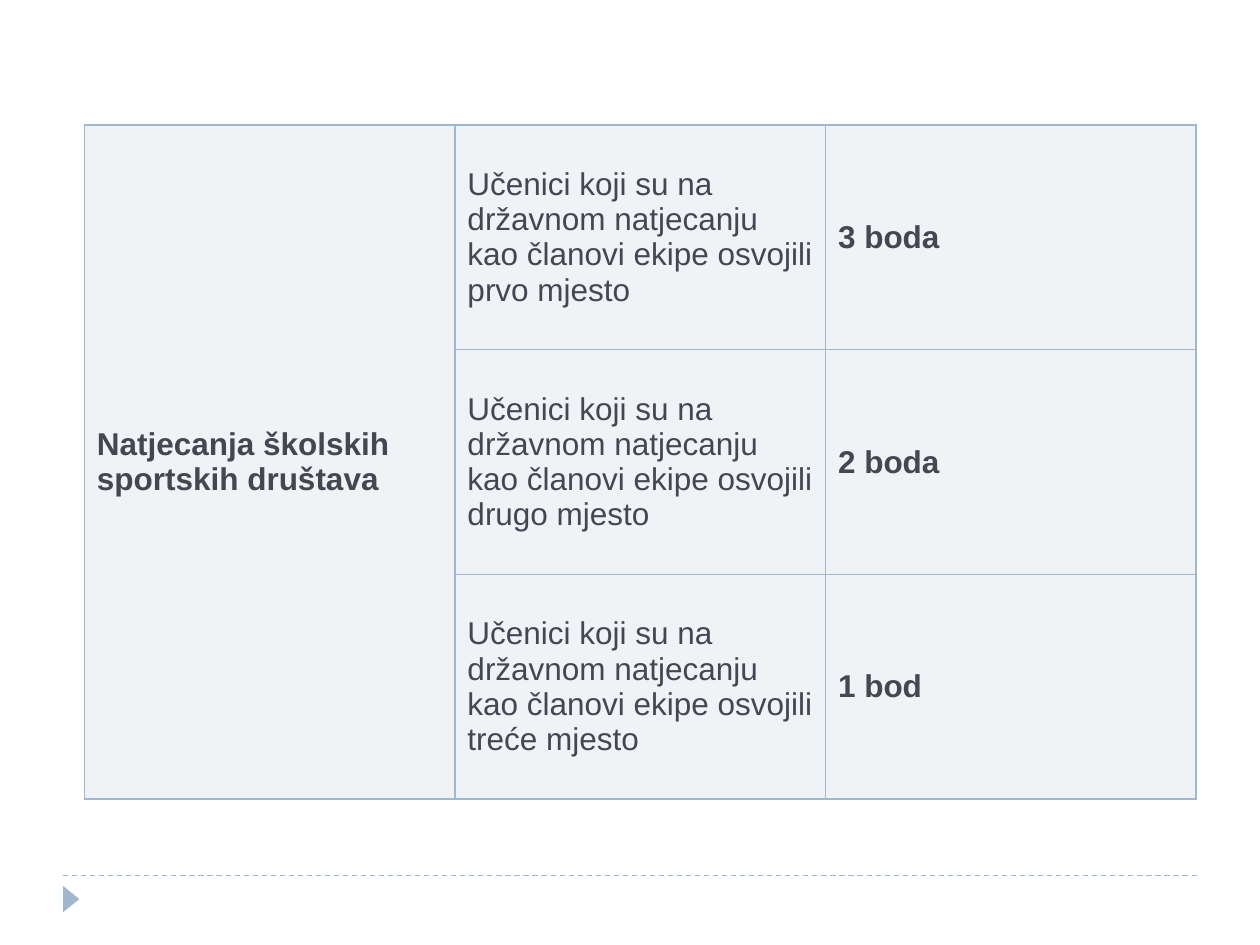
from lxml.etree import SubElement
from pptx import Presentation
from pptx.dml.color import RGBColor
from pptx.enum.dml import MSO_LINE
from pptx.enum.shapes import MSO_CONNECTOR, MSO_SHAPE
from pptx.enum.text import MSO_ANCHOR
from pptx.oxml.ns import qn
from pptx.util import Cm, Pt

CATEGORY = "Natjecanja školskih\vsportskih društava"
AWARDS = [("prvo", "3 boda"), ("drugo", "2 boda"), ("treće", "1 bod")]
RULE = "Učenici koji su na državnom natjecanju kao članovi ekipe osvojili {} mjesto"
ACCENT, PALE, INK = "9FB8CD", "EFF3F6", "464653"
COL_W, ROW_H = 7.47, 4.53


def paint(fill, color):
    fill.solid()
    fill.fore_color.rgb = RGBColor.from_string(color)


def add_borders(cell):
    tcPr = cell._tc.get_or_add_tcPr()
    for i, side in enumerate(("lnL", "lnR", "lnT", "lnB")):
        ln = tcPr.makeelement(qn(f"a:{side}"), {"w": str(Pt(1))})
        fill = SubElement(ln, qn("a:solidFill"))
        SubElement(fill, qn("a:srgbClr"), val=ACCENT)
        tcPr.insert(i, ln)


def style_cell(cell, text, bold):
    cell.text_frame.text = text
    cell.vertical_anchor = MSO_ANCHOR.MIDDLE
    paint(cell.fill, PALE)
    add_borders(cell)
    for p in cell.text_frame.paragraphs:
        for r in p.runs:
            r.font.name, r.font.size, r.font.bold = "Arial", Pt(18), bold
            paint(r.font.fill, INK)


def add_footer(s):
    rule = s.shapes.add_connector(
        MSO_CONNECTOR.STRAIGHT, Cm(1.27), Cm(17.65), Cm(24.13), Cm(17.65))
    paint(rule.line.fill, ACCENT)
    rule.line.width = Pt(0.75)
    rule.line.dash_style = MSO_LINE.DASH
    SubElement(rule._element.spPr, qn("a:effectLst"))

    marker = s.shapes.add_shape(
        MSO_SHAPE.ISOSCELES_TRIANGLE, Cm(1.17), Cm(17.96), Cm(0.53), Cm(0.33))
    marker.rotation = 90
    marker.shadow.inherit = False
    paint(marker.fill, ACCENT)
    marker.line.fill.background()


def add_points_table(s):
    n = len(AWARDS)
    table = s.shapes.add_table(
        n, 3, Cm(1.7), Cm(2.52), Cm(3 * COL_W), Cm(n * ROW_H)).table
    table.first_row = table.horz_banding = False
    for col in table.columns:
        col.width = Cm(COL_W)
    for i, (place, points) in enumerate(AWARDS):
        table.rows[i].height = Cm(ROW_H)
        style_cell(table.cell(i, 0), "" if i else CATEGORY, True)
        style_cell(table.cell(i, 1), RULE.format(place), False)
        style_cell(table.cell(i, 2), points, True)
    table.cell(0, 0).merge(table.cell(n - 1, 0))


def main():
    prs = Presentation()
    prs.slide_width, prs.slide_height = Cm(25.4), Cm(19.05)
    s = prs.slides.add_slide(prs.slide_layouts[6])
    paint(s.background.fill, "FFFFFF")
    add_footer(s)
    add_points_table(s)
    prs.save("out.pptx")


if __name__ == "__main__":
    main()
